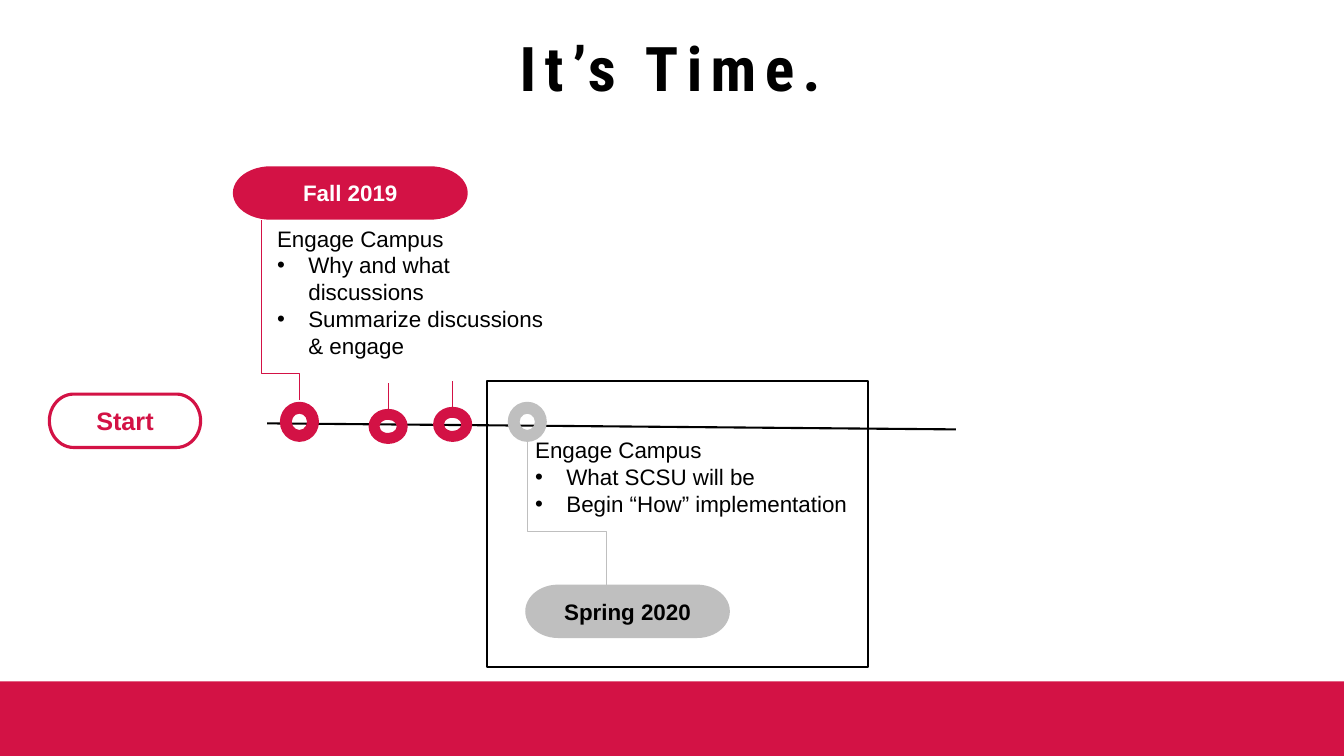
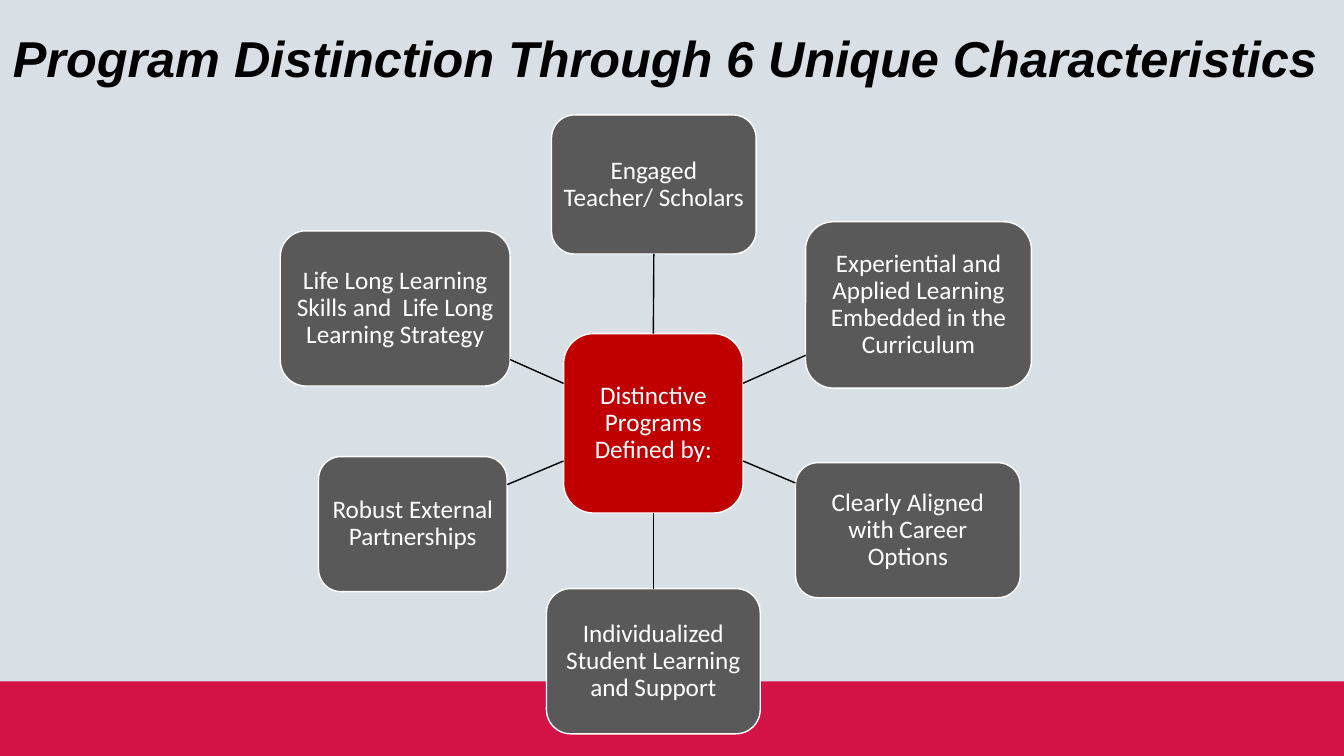
"""Build a two-slide deck: a campus timeline and a hub of program characteristics."""
from lxml import etree
from pptx import Presentation
from pptx.dml.color import RGBColor
from pptx.enum import shapes, text
from pptx.oxml import ns
from pptx.util import Inches, Pt

RED = RGBColor(0xD3, 0x12, 0x45)
HUB_RED = RGBColor(0xC0, 0x00, 0x00)
BLACK = RGBColor(0x00, 0x00, 0x00)
WHITE = RGBColor(0xFF, 0xFF, 0xFF)
SILVER = RGBColor(0xBF, 0xBF, 0xBF)
CHARCOAL = RGBColor(0x59, 0x59, 0x59)
MIST = RGBColor(0xD9, 0xE0, 0xE5)

WIDTH, HEIGHT = 13.33, 7.5
BAND_TOP = 6.76
KIND = shapes.MSO_SHAPE
STRAIGHT = shapes.MSO_CONNECTOR.STRAIGHT
ELBOW = shapes.MSO_CONNECTOR.ELBOW
TOP, BOTTOM = 0, 2

TITLE = {"bold": True}
BODY = {"name": "Arial", "size": Pt(16)}
PILL = {"name": "Arial", "size": Pt(16), "bold": True}
START = PILL | {"size": Pt(18)}
NODE = {"name": "Calibri", "size": Pt(18)}

HUB = (5.59, 3.31, 1.78, 1.78)
CHARACTERISTICS = [
    ("Engaged Teacher/ Scholars", (5.47, 1.14, 2.03, 1.38)),
    ("Experiential and Applied Learning Embedded in the Curriculum", (7.99, 2.2, 2.24, 1.65)),
    ("Clearly Aligned with Career Options", (7.89, 4.59, 2.23, 1.34)),
    ("Individualized Student Learning and Support", (5.42, 5.84, 2.12, 1.44)),
    ("Robust External Partnerships", (3.16, 4.53, 1.87, 1.34)),
    ("Life Long Learning Skills and  Life Long Learning Strategy", (2.78, 2.29, 2.28, 1.54)),
]


def inches(values):
    return [Inches(value) for value in values]


def set_format(target, values):
    for name, value in values.items():
        setattr(target, name, value)


def write(para, words, style, color, spacing=None):
    span = para.add_run()
    span.text = words
    set_format(span.font, style)
    span.font.color.rgb = color
    if spacing:
        span._r.get_or_add_rPr().set("spc", str(spacing * 100))


def add_shape(page, kind, place, fill=None, line=None, weight=1):
    shape = page.shapes.add_shape(kind, *inches(place))
    shape.shadow.inherit = False
    if fill is None:
        shape.fill.background()
    else:
        shape.fill.solid()
        shape.fill.fore_color.rgb = fill
    if line is None:
        shape.line.fill.background()
    else:
        shape.line.color.rgb = line
        shape.line.width = Pt(weight)
    return shape


def add_label(shape, words, style, color, **margins):
    frame = shape.text_frame
    set_format(frame, {"word_wrap": True, "vertical_anchor": text.MSO_ANCHOR.MIDDLE} | margins)
    para = frame.paragraphs[0]
    para.alignment = text.PP_ALIGN.CENTER
    write(para, words, style, color)
    return para


def add_pill(page, words, place, fill, color, style=PILL, line=None):
    pill = add_shape(page, KIND.FLOWCHART_TERMINATOR, place, fill, line, 2.25)
    add_label(pill, words, style, color)


def add_donut(page, place, color):
    return add_shape(page, KIND.DONUT, place, color, color, 2)


def add_line(page, start, end, color, weight, kind=STRAIGHT):
    line = page.shapes.add_connector(kind, *inches((*start, *end)))
    line.line.color.rgb = color
    line.line.width = Pt(weight)
    etree.SubElement(line._element.spPr, ns.qn("a:effectLst"))
    return line


def add_vertical_elbow(page, start, end, color, bend):
    middle_x, middle_y = (start[0] + end[0]) / 2, (start[1] + end[1]) / 2
    turned = [(middle_x - (y - middle_y), middle_y + (x - middle_x)) for x, y in (start, end)]
    elbow = add_line(page, *turned, color, 0.5, ELBOW)
    properties = elbow._element.spPr
    properties.find(ns.qn("a:xfrm")).set("rot", str(270 * 60000))
    geometry = properties.find(ns.qn("a:prstGeom"))
    guides = geometry.find(ns.qn("a:avLst"))
    if guides is None:
        guides = etree.SubElement(geometry, ns.qn("a:avLst"))
    etree.SubElement(guides, ns.qn("a:gd"), name="adj1", fmla=f"val {round(bend * 100000)}")


def add_notes_list(page, place, heading, items):
    frame = page.shapes.add_textbox(*inches(place)).text_frame
    frame.word_wrap = True
    write(frame.paragraphs[0], heading, BODY, BLACK)
    for item in items:
        para = frame.add_paragraph()
        properties = para._p.get_or_add_pPr()
        indent = Inches(0.31)
        properties.set("marL", str(indent))
        properties.set("indent", str(-indent))
        etree.SubElement(properties, ns.qn("a:buFont"), typeface="Arial")
        etree.SubElement(properties, ns.qn("a:buChar"), char="•")
        write(para, item, BODY, BLACK)


def add_title(page, words, place, style, alignment, spacing=None):
    frame = page.shapes.add_textbox(*inches(place)).text_frame
    set_format(frame, {"word_wrap": True, "vertical_anchor": text.MSO_ANCHOR.MIDDLE})
    para = frame.paragraphs[0]
    set_format(para, {"alignment": alignment, "line_spacing": 0.9})
    write(para, words, TITLE | style, BLACK, spacing)


def add_page(deck, background):
    page = deck.slides.add_slide(deck.slide_layouts[6])
    page.background.fill.solid()
    page.background.fill.fore_color.rgb = background
    add_shape(page, KIND.RECTANGLE, (0, BAND_TOP, WIDTH, HEIGHT - BAND_TOP), RED)
    return page


def add_node(page, words, place, fill):
    node = add_shape(page, KIND.ROUNDED_RECTANGLE, place, fill, WHITE)
    margins = dict.fromkeys(
        ("margin_left", "margin_top", "margin_right", "margin_bottom"), Inches(0.05))
    add_label(node, words, NODE, WHITE, **margins).line_spacing = 0.9
    return node


def center(place):
    left, top, width, height = place
    return left + width / 2, top + height / 2


def edge_toward(place, target):
    x, y = center(place)
    across, down = target[0] - x, target[1] - y
    reach = 1 / max(abs(across) / (place[2] / 2), abs(down) / (place[3] / 2))
    return x + across * reach, y + down * reach


def add_spoke(page, hub, node, place):
    start = edge_toward(HUB, center(place))
    end = edge_toward(place, center(HUB))
    spoke = add_line(page, start, end, BLACK, 1)
    across = center(place)[0] - center(HUB)[0]
    if abs(across) < 0.1:
        above = place[1] < HUB[1]
        spoke.begin_connect(hub, TOP if above else BOTTOM)
        spoke.end_connect(node, BOTTOM if above else TOP)


def build_timeline(deck):
    page = add_page(deck, WHITE)
    add_line(page, (2.65, 4.2), (9.48, 4.26), BLACK, 1.5)
    add_pill(page, "Start", (0.49, 3.91, 1.5, 0.53), WHITE, RED, START, RED)

    add_donut(page, (2.79, 4, 0.36, 0.37), RED)
    add_vertical_elbow(page, (2.97, 3.97), (2.59, 2.18), RED, 0.15)
    add_pill(page, "Fall 2019", (2.31, 1.65, 2.33, 0.53), RED, WHITE)
    add_notes_list(page, (2.65, 2.18, 2.95, 1.64), "Engage Campus",
                   ["Why and what discussions", "Summarize discussions & engage"])

    add_vertical_elbow(page, (5.23, 4.37), (6.01, 6.18), SILVER, 0.5)
    add_donut(page, (5.05, 4, 0.36, 0.37), SILVER)
    add_pill(page, "Spring 2020", (5.21, 5.8, 2.03, 0.53), SILVER, BLACK)
    add_notes_list(page, (5.21, 4.28, 3.4, 0.91), "Engage Campus",
                   ["What SCSU will be", "Begin “How” implementation"])

    for left, top in ((3.67, 4.07), (4.31, 4.05)):
        donut = add_donut(page, (left, top, 0.36, 0.32), RED)
        middle = left + 0.18
        tick = add_line(page, (middle, top), (middle, top - 0.27), RED, 0.5)
        tick.begin_connect(donut, TOP)

    add_title(page, "It’s Time.", (0.9, 0.13, 11.5, 1.15),
              {"name": "Roboto Condensed", "size": Pt(44)}, text.PP_ALIGN.CENTER, 6)
    add_shape(page, KIND.RECTANGLE, (4.83, 3.78, 3.78, 2.84), line=BLACK, weight=1.5)


def build_characteristics(deck):
    page = add_page(deck, MIST)
    add_title(page, "Program Distinction Through 6 Unique Characteristics",
              (0.03, 0, 13.3, 1.21), {"name": "Arial", "size": Pt(36), "italic": True},
              text.PP_ALIGN.LEFT)
    hub = add_node(page, "Distinctive Programs Defined by:", HUB, HUB_RED)
    for words, place in CHARACTERISTICS:
        node = add_node(page, words, place, CHARCOAL)
        add_spoke(page, hub, node, place)


def main():
    deck = Presentation()
    deck.slide_width, deck.slide_height = inches((WIDTH, HEIGHT))
    build_timeline(deck)
    build_characteristics(deck)
    deck.save("out.pptx")


if __name__ == "__main__":
    main()
